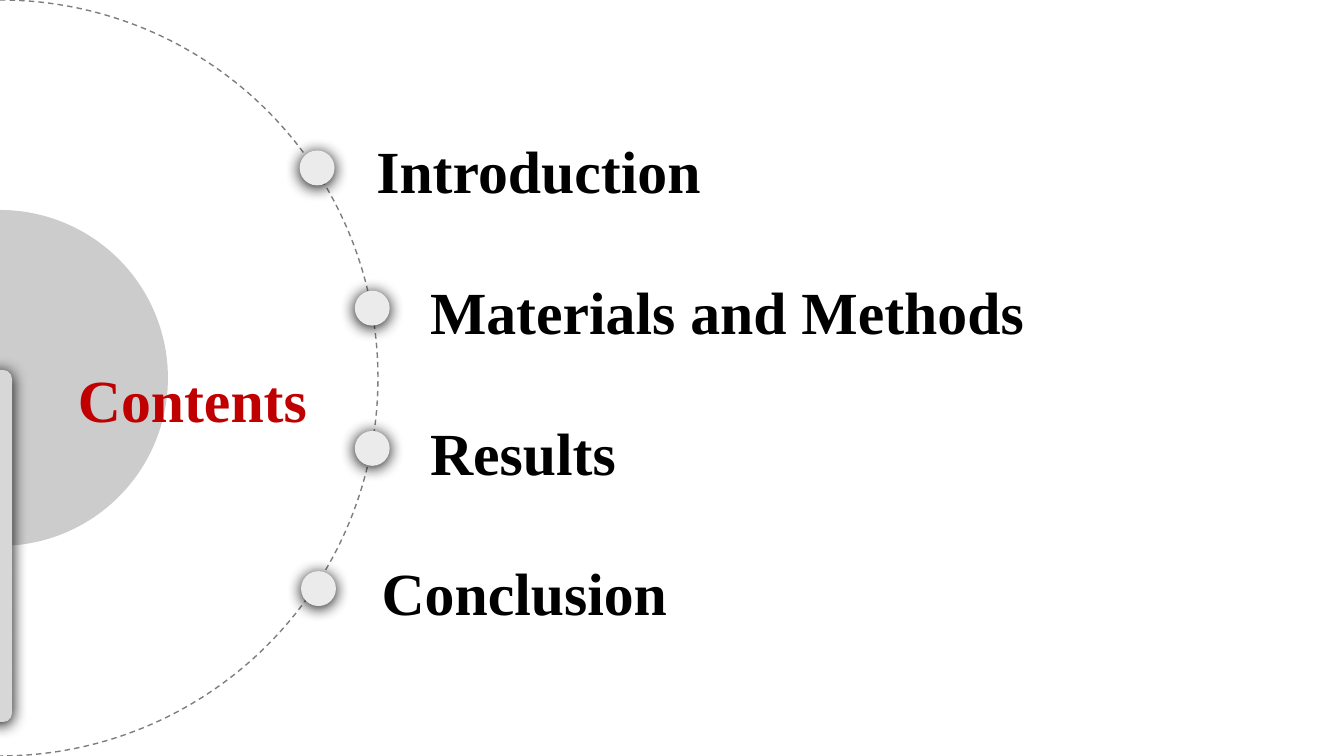
from lxml import etree
from pptx import Presentation
from pptx.dml.color import RGBColor
from pptx.enum.dml import MSO_LINE
from pptx.enum.shapes import MSO_SHAPE
from pptx.enum.text import MSO_ANCHOR, PP_ALIGN
from pptx.oxml.ns import qn
from pptx.util import Inches, Pt

WHITE = RGBColor(0xFF, 0xFF, 0xFF)
BLACK = RGBColor(0x00, 0x00, 0x00)
RED = RGBColor(0xC0, 0x00, 0x00)
DASH_GREY = RGBColor(0x7D, 0x7D, 0x7D)
DOT_GREY = RGBColor(0xEB, 0xEB, 0xEB)
BAR_GREY = RGBColor(0xD7, 0xD7, 0xD7)

FONT = "Times New Roman"
SLIDE_WIDTH = 10
SLIDE_HEIGHT = SLIDE_WIDTH * 9 / 16
DOT_SIZE = 0.26
LABEL_HEIGHT = 0.61
SECTIONS = [
    ("Introduction", 2.23, 2.72),
    ("Materials and Methods", 2.64, 3.12),
    ("Results", 2.64, 3.12),
    ("Conclusion", 2.24, 2.76),
]


def add_filled(slide, preset, left, top, width, height, color):
    """Add a flat preset shape without outline or shadow."""
    shape = slide.shapes.add_shape(
        preset, Inches(left), Inches(top), Inches(width), Inches(height))
    shape.fill.solid()
    shape.fill.fore_color.rgb = color
    shape.line.fill.background()
    shape.shadow.inherit = False
    return shape


def add_soft_shadow(shape):
    """Give a shape a blurred black shadow just below it."""
    effects = shape._element.spPr.find(qn("a:effectLst"))
    shadow = etree.SubElement(
        effects, qn("a:outerShdw"), blurRad=str(Pt(8.5)), dist=str(Pt(1)),
        dir="5400000", algn="ctr", rotWithShape="0")
    etree.SubElement(shadow, qn("a:srgbClr"), val=str(BLACK))


def add_half_disc(slide, center_y, radius, end_angle, color):
    """Add the right half of a disc centred on the slide's left edge."""
    disc = add_filled(slide, MSO_SHAPE.ARC, -radius, center_y - radius,
                      2 * radius, 2 * radius, color)
    disc.adjustments[0] = 162
    disc.adjustments[1] = end_angle
    return disc


def add_label(slide, text, left, top, width, color, anchor):
    """Add a bold line of text in a box."""
    label = slide.shapes.add_textbox(
        Inches(left), Inches(top), Inches(width), Inches(LABEL_HEIGHT))
    frame = label.text_frame
    frame.word_wrap = True
    frame.vertical_anchor = anchor
    frame.margin_left = frame.margin_right = Inches(0.08)
    frame.margin_top = frame.margin_bottom = Inches(0.04)
    frame.text = text
    frame.paragraphs[0].alignment = PP_ALIGN.LEFT
    font = frame.paragraphs[0].runs[0].font
    font.name, font.size, font.bold = FONT, Pt(32), True
    font.color.rgb = color


def add_orbit(slide, height):
    """Add the dashed half circle spanning the given height."""
    orbit = add_half_disc(slide, height / 2, height / 2, 54.07, WHITE)
    orbit.line.color.rgb = DASH_GREY
    orbit.line.width = Pt(0.75)
    orbit.line.dash_style = MSO_LINE.DASH


def add_sections(slide, top, height):
    """Add the section names and their dots, evenly spread over the height."""
    gaps = len(SECTIONS) - 1
    label_step = (height - LABEL_HEIGHT) / gaps
    dot_top = top + 0.16
    dot_step = (height - 0.2 - DOT_SIZE - 0.16) / gaps
    for row, (name, dot_left, label_left) in enumerate(SECTIONS):
        add_label(slide, name, label_left, top + row * label_step, 6, BLACK,
                  MSO_ANCHOR.MIDDLE)
        dot = add_filled(slide, MSO_SHAPE.OVAL, dot_left,
                         dot_top + row * dot_step, DOT_SIZE, DOT_SIZE,
                         DOT_GREY)
        add_soft_shadow(dot)


def add_title_hub(slide, center_y, radius):
    """Add the translucent hub, the bar at the edge and the title."""
    hub = add_half_disc(slide, center_y, radius, 53.6, BLACK)
    hub_color = hub._element.spPr.find(qn("a:solidFill"))[0]
    etree.SubElement(hub_color, qn("a:alpha"), val="20000")
    bar = add_filled(slide, MSO_SHAPE.ROUNDED_RECTANGLE, -0.1,
                     center_y - 0.06, 0.19, 2.62, BAR_GREY)
    bar.adjustments[0] = 0.35
    add_soft_shadow(bar)
    add_label(slide, "Contents", 0.5, center_y - 0.15, 2, RED, MSO_ANCHOR.TOP)


def main():
    """Build the contents slide and save it."""
    deck = Presentation()
    deck.slide_width = Inches(SLIDE_WIDTH)
    deck.slide_height = Inches(SLIDE_HEIGHT)
    slide = deck.slides.add_slide(deck.slide_layouts[6])
    add_orbit(slide, SLIDE_HEIGHT)
    add_sections(slide, 0.96, 3.75)
    add_title_hub(slide, SLIDE_HEIGHT / 2, 1.25)
    deck.save("out.pptx")


if __name__ == "__main__":
    main()
